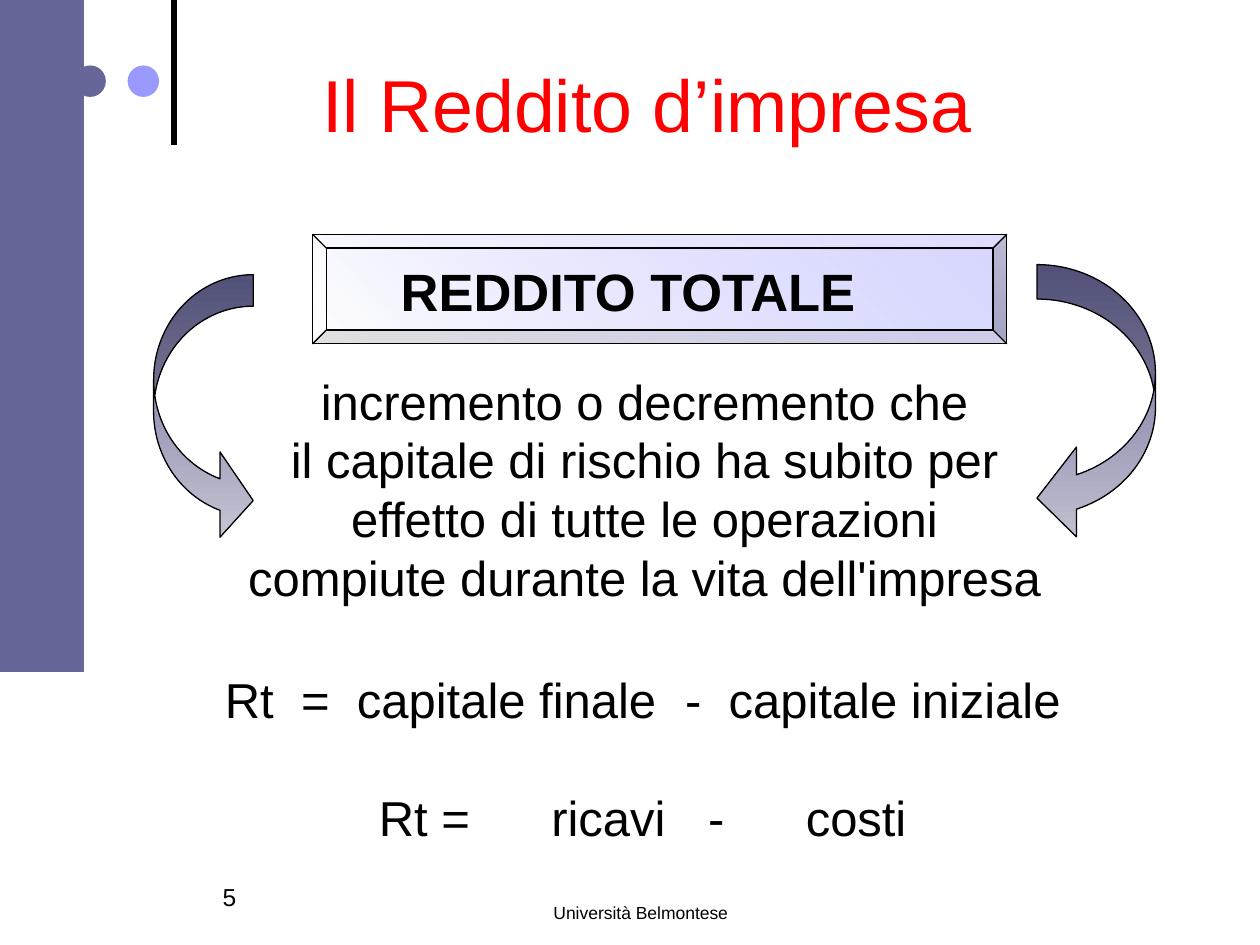
"""Build the slide on business income, with its heading, definition and formulas."""
from dataclasses import dataclass

from lxml import etree
from pptx import Presentation
from pptx.dml.color import RGBColor
from pptx.enum.shapes import MSO_CONNECTOR, MSO_SHAPE
from pptx.enum.text import MSO_ANCHOR, PP_ALIGN
from pptx.oxml.ns import qn
from pptx.util import Pt

LEFT, CENTER = PP_ALIGN.LEFT, PP_ALIGN.CENTER
TOP = MSO_ANCHOR.TOP
RECTANGLE, OVAL = MSO_SHAPE.RECTANGLE, MSO_SHAPE.OVAL
BEVEL, CURVED_ARROW = MSO_SHAPE.BEVEL, MSO_SHAPE.CURVED_RIGHT_ARROW
STRAIGHT = MSO_CONNECTOR.STRAIGHT


@dataclass(frozen=True)
class Theme:
    font: str = "Arial"
    ink: str = "000000"
    title: str = "FF0000"
    slate: str = "666699"
    lilac: str = "9999FF"
    white: str = "FFFFFF"
    title_size: float = 42
    heading_size: float = 30
    body_size: float = 28
    number_size: float = 14
    footer_size: float = 10
    body_leading: float = 33.7
    outline: float = 0.75
    rule: float = 3


@dataclass(frozen=True)
class Box:
    left: float
    top: float
    width: float
    height: float

    def lengths(self) -> tuple:
        return tuple(Pt(n) for n in (self.left, self.top, self.width, self.height))


@dataclass(frozen=True)
class Ornament:
    kind: int
    box: Box
    color: str


@dataclass(frozen=True)
class GradientShape:
    kind: int
    box: Box
    adjustments: tuple
    colors: tuple
    angle: float
    opacities: tuple = ()
    flipped: bool = False


@dataclass(frozen=True)
class Caption:
    box: Box
    lines: tuple
    size: float
    align: int = LEFT
    bold: bool = False
    leading: float = 1.0
    gap: float = 0
    margin_left: float = 7.2
    tabs: tuple = ()


THEME = Theme()

ORNAMENTS = (
    Ornament(OVAL, Box(42.5, 37.4, 18, 18), THEME.slate),
    Ornament(OVAL, Box(72.9, 37.4, 18, 18), THEME.lilac),
    Ornament(RECTANGLE, Box(0, 0, 48, 384), THEME.slate),
)

GRADIENT_SHAPES = (
    GradientShape(BEVEL, Box(178.6, 133.9, 396.7, 62.6), (0.125,),
                  (THEME.white, THEME.lilac), 45, (60, 40)),
    GradientShape(CURVED_ARROW, Box(87.8, 157, 56.9, 153.4), (0.316, 0.856, 0.333),
                  (THEME.slate, "C7C7D4"), 270),
    GradientShape(CURVED_ARROW, Box(592.6, 151.2, 67.7, 159.1), (0.291, 0.758, 0.333),
                  (THEME.slate, "C1C1D0"), 270, flipped=True),
)

CAPTIONS = (
    Caption(Box(252, 511.9, 228.2, 36), ("Università Belmontese",), THEME.footer_size, CENTER),
    Caption(Box(120.2, 500.4, 102.2, 36), ("5",), THEME.number_size),
    Caption(Box(206.6, 144.7, 295.2, 43.2), ("REDDITO TOTALE",), THEME.heading_size,
            bold=True, margin_left=22.4),
    Caption(Box(127.4, 208.4, 481.7, 141.8),
            ("incremento o decremento che",
             "il capitale di rischio ha subito per effetto di tutte le operazioni",
             "compiute durante la vita dell'impresa"),
            THEME.body_size, CENTER, leading=Pt(THEME.body_leading)),
    Caption(Box(87.8, 379, 561.6, 108.3),
            ("\tRt\t=\tcapitale finale\t-\tcapitale iniziale", "\tRt =\tricavi\t-\tcosti"),
            THEME.body_size, leading=Pt(THEME.body_leading), gap=THEME.body_leading,
            tabs=((33.6, 77.2, 109.1, 296.6, 321.5), (121.6, 220.2, 309.8, 365.6))),
)


def style(paragraph, size: float, color: str, align: int, bold: bool = False) -> None:
    paragraph.alignment = align
    font = paragraph.font
    font.name, font.size, font.bold = THEME.font, Pt(size), bold
    font.color.rgb = RGBColor.from_string(color)


def set_tabs(paragraph, stops: tuple) -> None:
    tab_list = etree.Element(qn("a:tabLst"))
    for stop in stops:
        etree.SubElement(tab_list, qn("a:tab"), pos=str(int(Pt(stop))), algn="l")
    properties = paragraph._p.get_or_add_pPr()
    properties.find(qn("a:defRPr")).addprevious(tab_list)


def add_ornament(slide, ornament: Ornament) -> None:
    mark = slide.shapes.add_shape(ornament.kind, *ornament.box.lengths())
    mark.shadow.inherit = False
    mark.fill.solid()
    mark.fill.fore_color.rgb = RGBColor.from_string(ornament.color)
    mark.line.fill.background()


def add_rule(slide) -> None:
    rule = slide.shapes.add_connector(STRAIGHT, Pt(99.4), Pt(82.8), Pt(99.4), Pt(-2))
    rule.line.color.rgb = RGBColor.from_string(THEME.ink)
    rule.line.width = Pt(THEME.rule)
    etree.SubElement(rule._element.spPr, qn("a:effectLst"))


def add_gradient_shape(slide, design: GradientShape) -> None:
    figure = slide.shapes.add_shape(design.kind, *design.box.lengths())
    figure.shadow.inherit = False
    for index, value in enumerate(design.adjustments):
        figure.adjustments[index] = value
    figure.fill.gradient()
    figure.fill.gradient_angle = design.angle
    for stop, color in zip(figure.fill.gradient_stops, design.colors):
        stop.color.rgb = RGBColor.from_string(color)
    swatches = figure._element.spPr.iterfind(".//" + qn("a:gs") + "/" + qn("a:srgbClr"))
    for swatch, opacity in zip(swatches, design.opacities):
        etree.SubElement(swatch, qn("a:alpha"), val=str(opacity * 1000))
    figure.line.color.rgb = RGBColor.from_string(THEME.ink)
    figure.line.width = Pt(THEME.outline)
    if design.flipped:
        figure._element.spPr.find(qn("a:xfrm")).set("flipH", "1")


def add_caption(slide, caption: Caption) -> None:
    frame = slide.shapes.add_textbox(*caption.box.lengths()).text_frame
    frame.word_wrap = True
    frame.margin_left = Pt(caption.margin_left)
    for index, line in enumerate(caption.lines):
        paragraph = frame.add_paragraph() if index else frame.paragraphs[0]
        paragraph.text = line
        paragraph.line_spacing = caption.leading
        paragraph.space_before = Pt(caption.gap if index else 0)
        style(paragraph, caption.size, THEME.ink, caption.align, caption.bold)
        if caption.tabs:
            set_tabs(paragraph, caption.tabs[index])


def set_title(slide) -> None:
    title = slide.shapes.title
    title.left, title.top, title.width, title.height = Box(93.6, 25.9, 552.2, 120.2).lengths()
    title.text_frame.vertical_anchor = TOP
    title.text_frame.margin_top = Pt(8)
    title.text_frame.text = "Il Reddito d’impresa"
    style(title.text_frame.paragraphs[0], THEME.title_size, THEME.title, CENTER)


def main() -> None:
    deck = Presentation()
    deck.slide_width, deck.slide_height = Pt(720), Pt(540)
    slide = deck.slides.add_slide(deck.slide_layouts[5])
    add_rule(slide)
    for ornament in ORNAMENTS:
        add_ornament(slide, ornament)
    for design in GRADIENT_SHAPES:
        add_gradient_shape(slide, design)
    for caption in CAPTIONS:
        add_caption(slide, caption)
    set_title(slide)
    deck.save("out.pptx")


if __name__ == "__main__":
    main()
